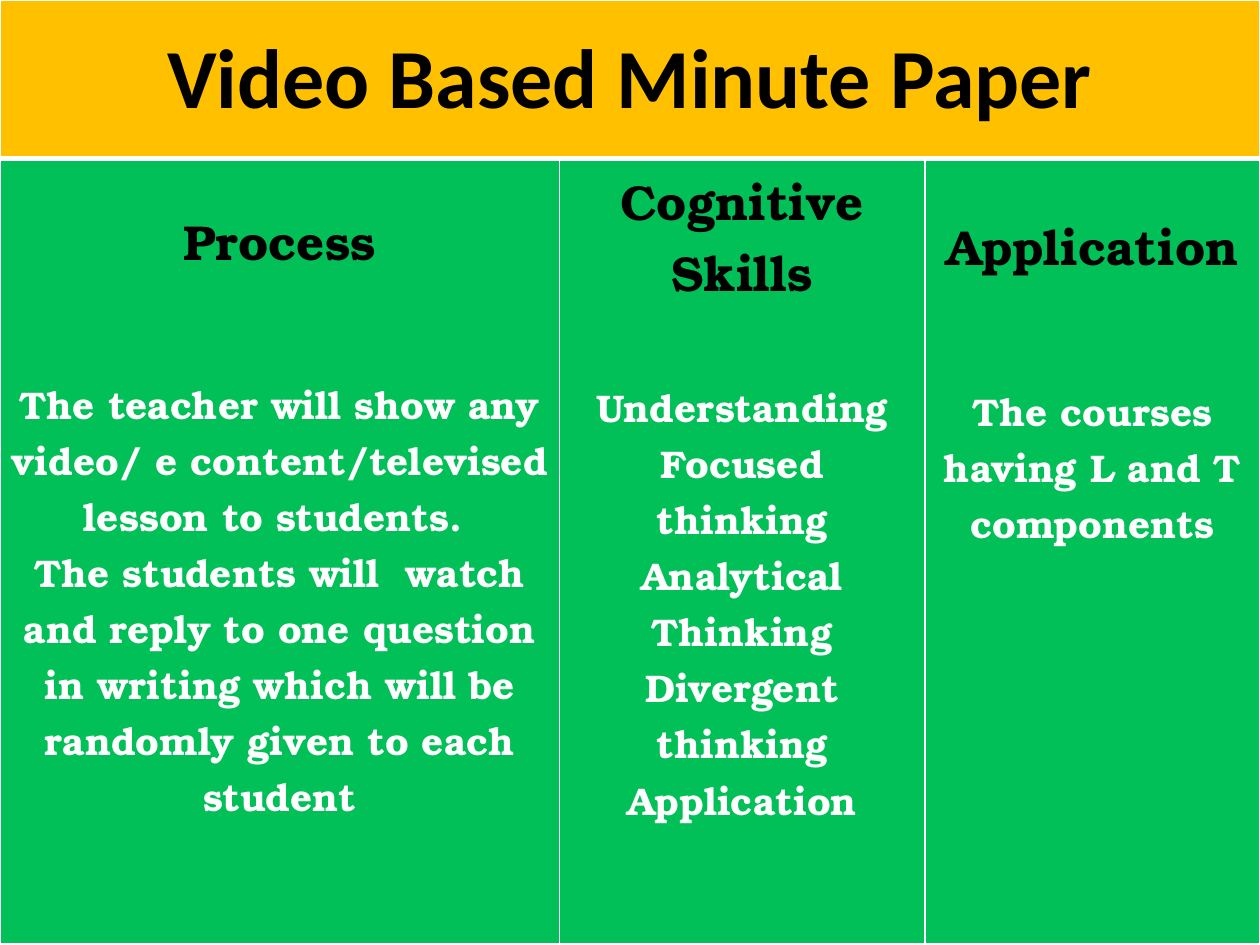
"""Build the Video Based Minute Paper slide."""
from lxml import etree
from pptx import Presentation
from pptx import util as u
from pptx.dml.color import RGBColor
from pptx.enum import text
from pptx.oxml.ns import qn

COLORS = {"banner": "FFC000", "body": "00C057", "heading": "000000", "detail": "FFFFFF", "border": "FFFFFF"}


def style_cell(cell, fill, borders, top=0.04):
    cell.margin_left = cell.margin_right = u.Inches(0.08)
    cell.margin_top, cell.margin_bottom = u.Inches(top), u.Inches(0.04)
    properties = cell._tc.get_or_add_tcPr()
    for side, width in zip("LRTB", borders):
        line = etree.SubElement(properties, qn(f"a:ln{side}"), w=str(u.Pt(width)))
        solid = etree.SubElement(line, qn("a:solidFill"))
        etree.SubElement(solid, qn("a:srgbClr"), val=COLORS["border"])
    cell.fill.solid()
    cell.fill.fore_color.rgb = RGBColor.from_string(COLORS[fill])


def write_line(paragraph, words, font, size, color, gap=0):
    paragraph.alignment = text.PP_ALIGN.CENTER
    paragraph.space_before = u.Pt(gap)
    run = paragraph.add_run()
    run.text = words
    run.font.name, run.font.size, run.font.bold = font, u.Pt(size), True
    run.font.color.rgb = RGBColor.from_string(COLORS[color])


columns = [
    (4.44, 0.36, 57, "Process", [
        "The teacher will show any video/ e content/televised lesson to students. ",
        "The students will  watch and reply to one question in writing which will be randomly given to each student",
    ]),
    (2.9, 0.04, 41, "Cognitive Skills", [
        "Understanding", "Focused thinking", "Analytical Thinking", "Divergent thinking", "Application",
    ]),
    (2.66, 0.4, 58, "Application", ["The courses having L and T components"]),
]

deck = Presentation()
deck.slide_width, deck.slide_height = u.Inches(10), u.Inches(7.5)
slide = deck.slides.add_slide(deck.slide_layouts[6])
activity = slide.shapes.add_table(2, 3, 0, 0, u.Inches(10), u.Inches(7.5)).table
activity.rows[0].height, activity.rows[1].height = u.Inches(1.26), u.Inches(6.24)

title = activity.cell(0, 0)
title.merge(activity.cell(0, 2))
for column in range(3):
    style_cell(activity.cell(0, column), "banner", (1, 1, 1, 3))
title.vertical_anchor = text.MSO_ANCHOR.MIDDLE
write_line(title.text_frame.paragraphs[0], "Video Based Minute Paper", "Calibri", 48, "heading")

for column, (width, top, gap, heading, details) in enumerate(columns):
    activity.columns[column].width = u.Inches(width)
    cell = activity.cell(1, column)
    style_cell(cell, "body", (1, 1, 3, 3), top)
    frame = cell.text_frame
    write_line(frame.paragraphs[0], heading, "TeX Gyre Bonum", 28, "heading")
    for position, detail in enumerate(details):
        write_line(frame.add_paragraph(), detail, "TeX Gyre Bonum", 22, "detail", 0 if position else gap)

deck.save("out.pptx")
